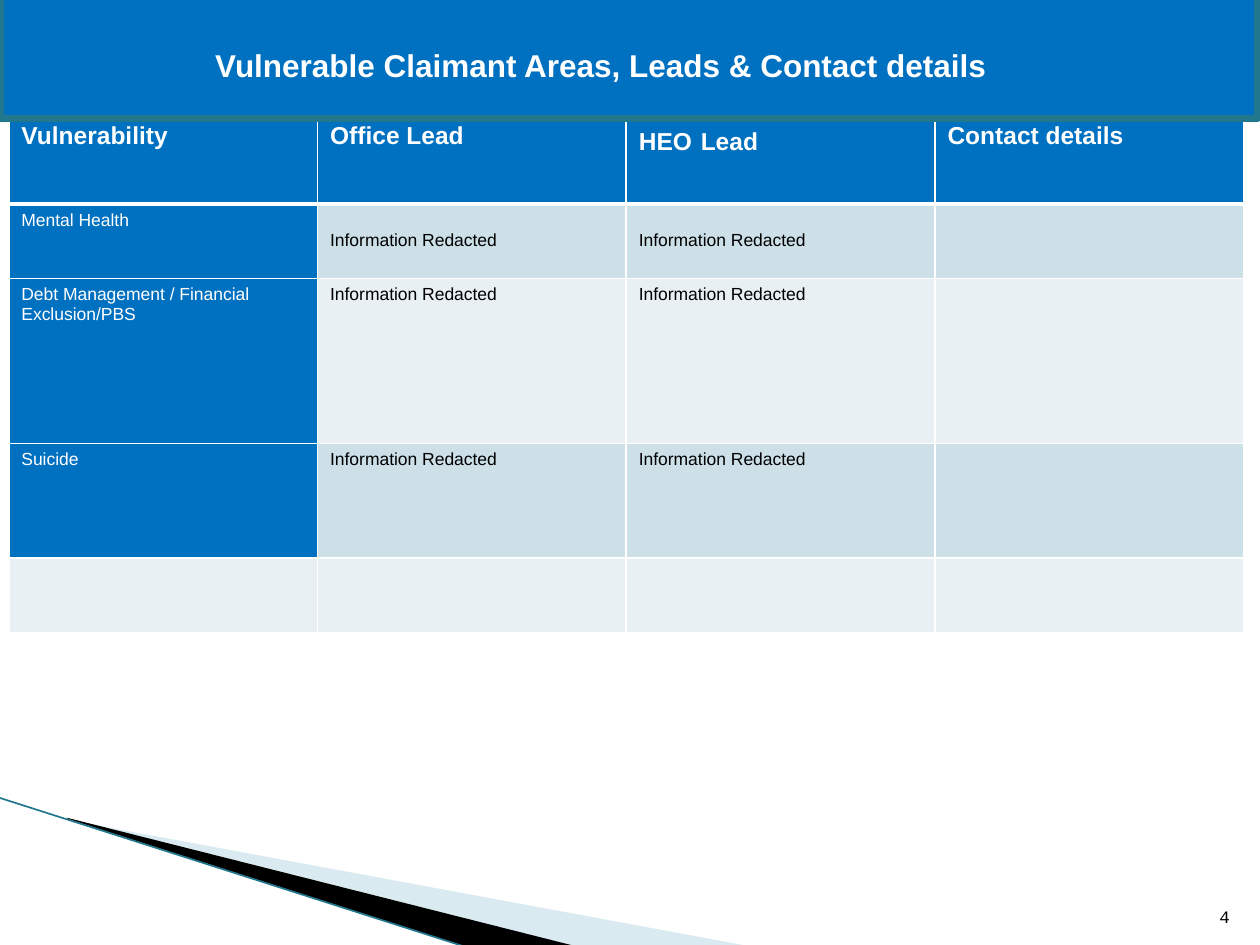
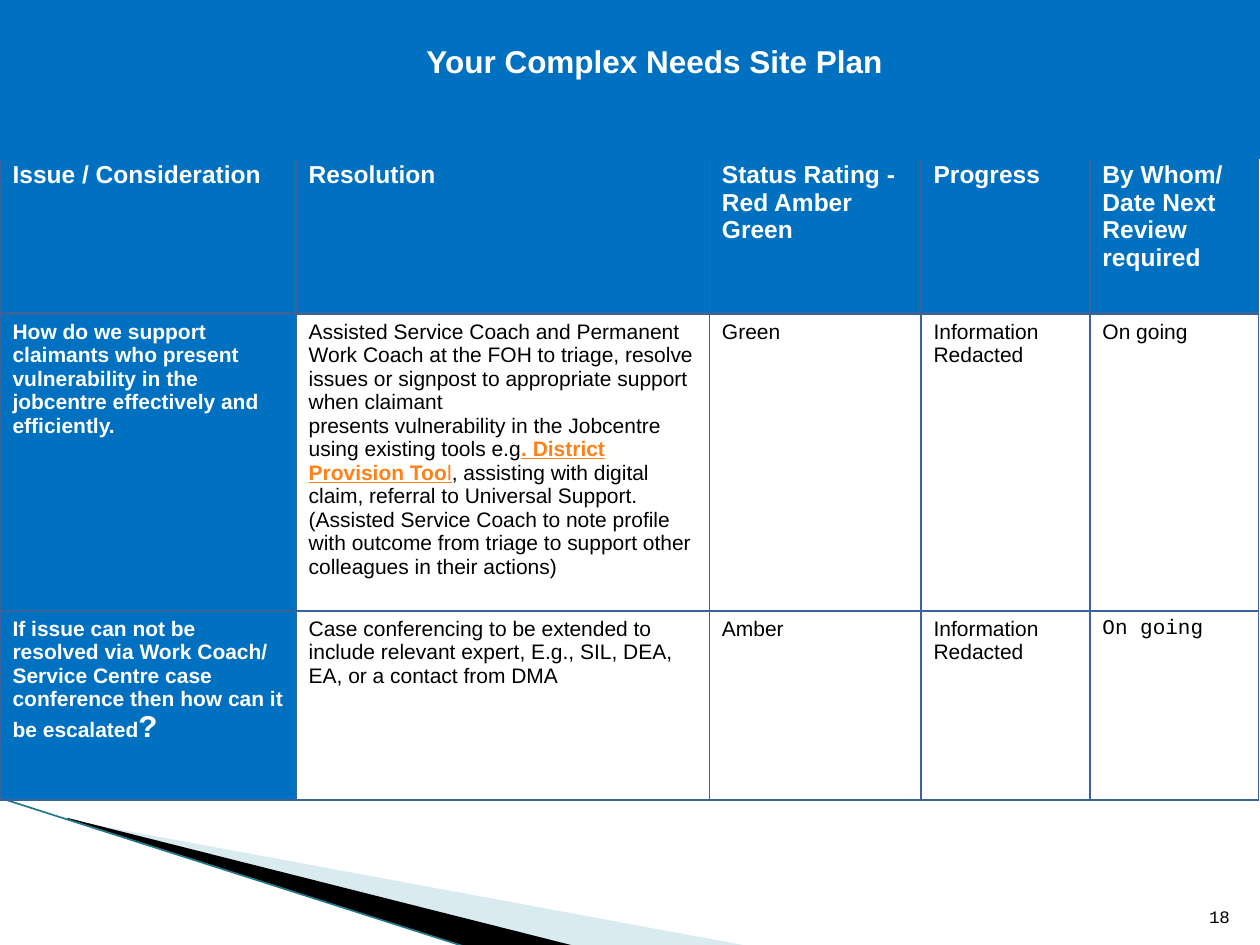
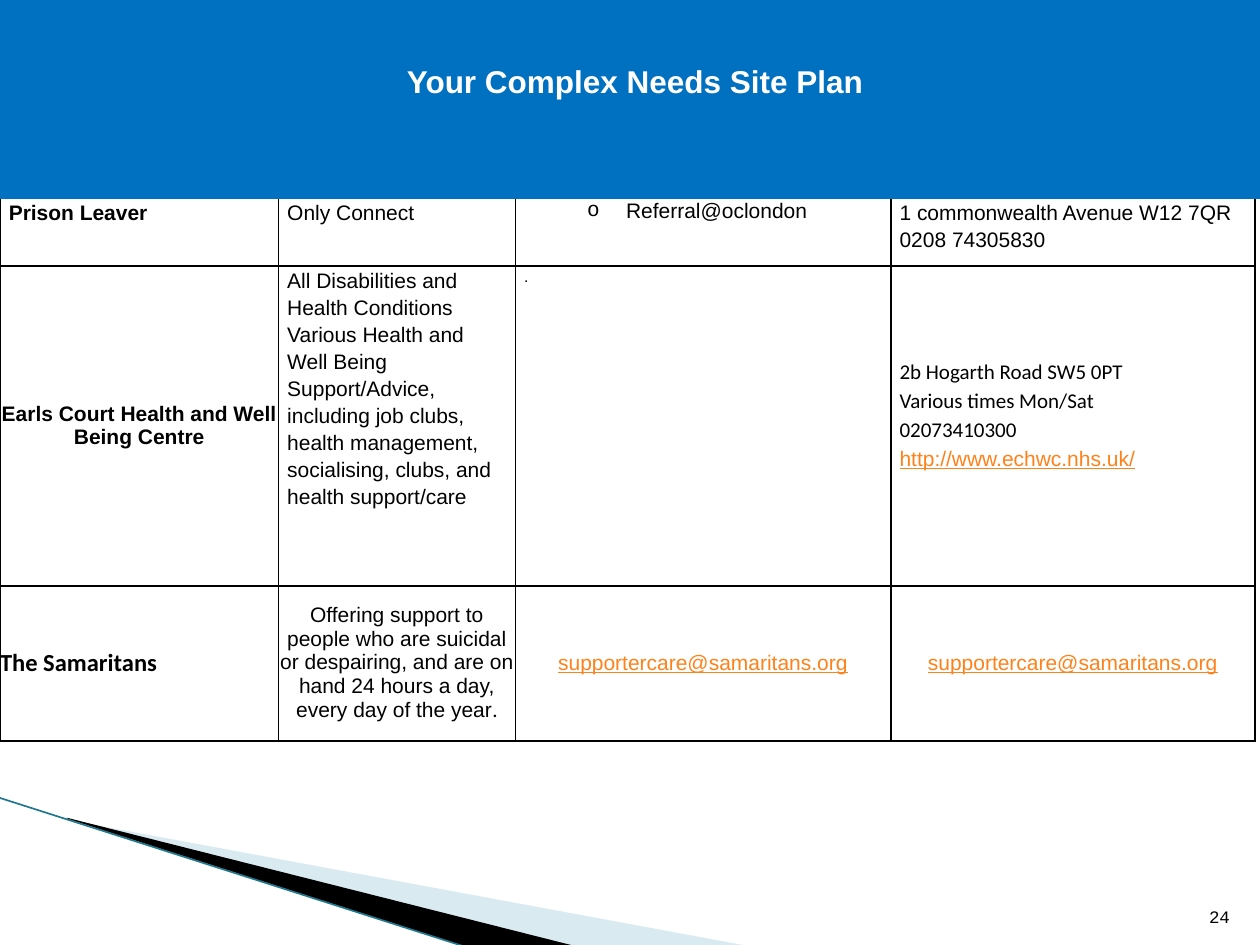
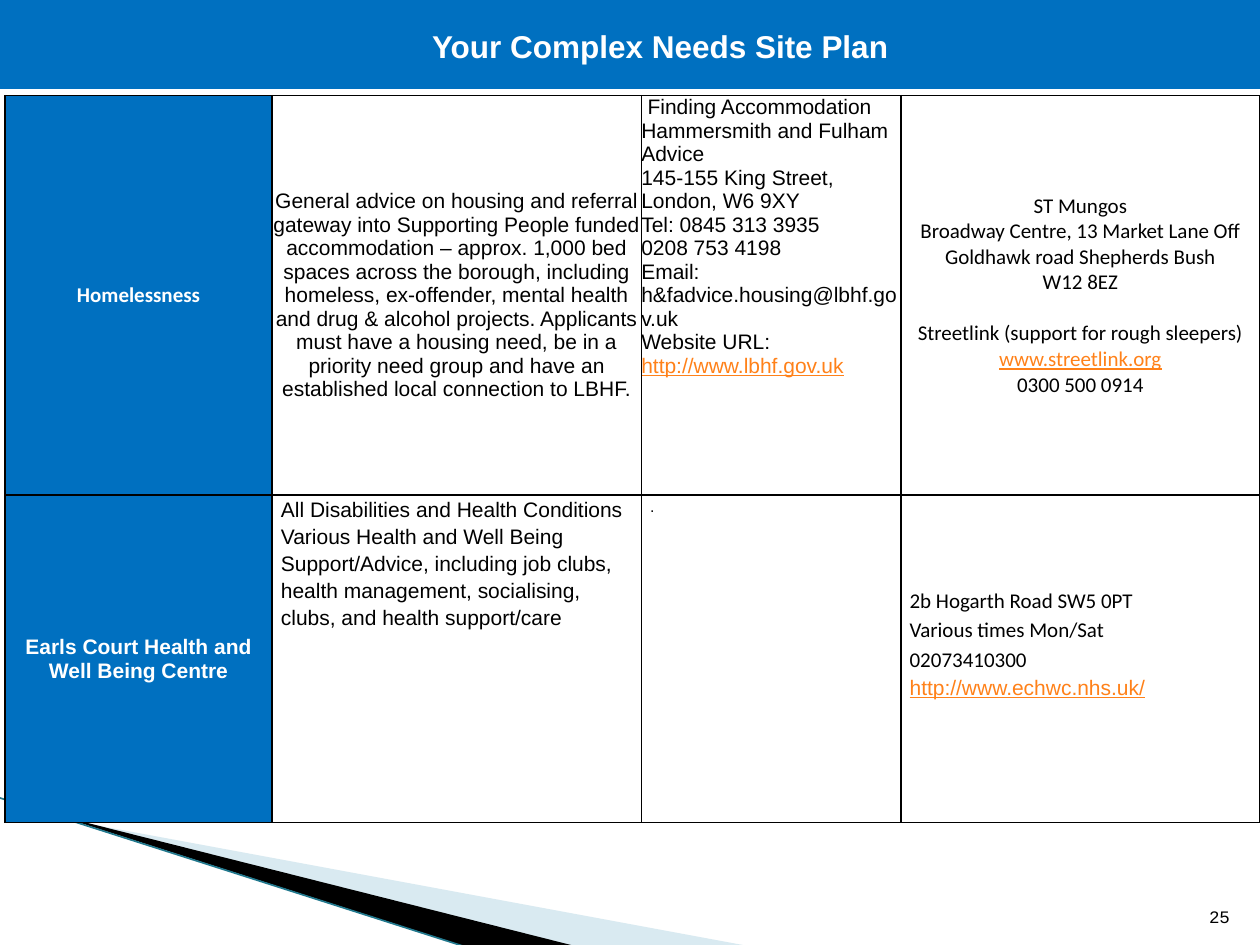
from lxml import etree
from pptx import Presentation
from pptx import util as u
from pptx.dml.color import RGBColor
from pptx.enum import shapes, text
from pptx.oxml import ns

COLORS = {
    "blue": "0070C0", "teal": "21788D", "white": "FFFFFF", "black": "000000",
    "orange": "FF8119", "pale": "A0CBDC", "band_dark": "CDE0E8",
    "band_light": "E8F0F4", "grid": "39639D",
}
LINK = dict(color="orange", underline=True)
ALIGN = {"l": text.PP_ALIGN.LEFT, "c": text.PP_ALIGN.CENTER, "r": text.PP_ALIGN.RIGHT}
ANCHOR = {"t": text.MSO_ANCHOR.TOP, "m": text.MSO_ANCHOR.MIDDLE, "b": text.MSO_ANCHOR.BOTTOM}
DEFAULT_INSETS = (0.1, 0.05, 0.1, 0.05)
NO_INSETS = (0, 0, 0, 0)
SIDE_INSETS = (0.07, 0, 0.07, 0)
LOWERED_INSETS = (0.07, 0.71, 0.07, 0)


def rgb(name):
    return RGBColor.from_string(COLORS[name])


def sub(parent, tag, **attributes):
    return etree.SubElement(parent, ns.qn(tag), {k: str(v) for k, v in attributes.items()})


# ---- Text ----
def para(*runs, **options):
    """A paragraph; each run is a string or a (string, format) pair."""
    return runs, options


def write(frame, paragraphs, **base):
    """Fill a text frame; paragraph and run formats override the base format."""
    frame.word_wrap = True
    for index, item in enumerate(paragraphs):
        runs, options = ((item,), {}) if isinstance(item, str) else item
        style = {**base, **options}
        paragraph = frame.paragraphs[0] if index == 0 else frame.add_paragraph()
        properties = paragraph._p.get_or_add_pPr()
        if "indent" in style:
            left, first = style["indent"]
            properties.set("marL", str(u.Inches(left)))
            properties.set("indent", str(u.Inches(first)))
        if "bullet" in style:
            sub(properties, "a:buFont", typeface="Courier New")
            sub(properties, "a:buChar", char=style["bullet"])
        paragraph.alignment = ALIGN[style.get("align", "l")]
        if "spacing" in style:
            paragraph.line_spacing = style["spacing"]
        if "before" in style:
            paragraph.space_before = u.Pt(style["before"])
        for entry in runs:
            words, override = (entry, {}) if isinstance(entry, str) else entry
            look = {**style, **override}
            run = paragraph.add_run()
            run.text = words
            font = run.font
            font.name = look.get("font", "Arial")
            font.size = u.Pt(look.get("size", 12))
            font.bold = look.get("bold", False)
            font.underline = look.get("underline", False)
            font.color.rgb = rgb(look.get("color", "black"))


def add_text(slide, box, words, anchor="t", **style):
    frame = slide.shapes.add_textbox(*map(u.Inches, box)).text_frame
    frame.vertical_anchor = ANCHOR[anchor]
    write(frame, [words], **style)


# ---- Shapes ----
def add_box(slide, box, line="blue", title=None):
    shape = slide.shapes.add_shape(shapes.MSO_SHAPE.RECTANGLE, *map(u.Inches, box))
    shape.shadow.inherit = False
    shape.fill.solid()
    shape.fill.fore_color.rgb = rgb("blue")
    shape.line.color.rgb = rgb(line)
    shape.line.width = u.Pt(4.33)
    if title:
        shape.text_frame.vertical_anchor = ANCHOR["m"]
        write(shape.text_frame, [title], size=18, bold=True, color="white", align="c")


def add_wedge(slide, points, color, opacity=None):
    """Draw a closed outline; points are in hundredths of an inch."""
    builder = slide.shapes.build_freeform(*points[0], scale=u.Inches(0.01))
    builder.add_line_segments(points[1:], close=True)
    shape = builder.convert_to_shape()
    shape.shadow.inherit = False
    shape.fill.solid()
    shape.fill.fore_color.rgb = rgb(color)
    shape.line.fill.background()
    if opacity:
        color_element = shape.fill._xPr.find(".//" + ns.qn("a:srgbClr"))
        sub(color_element, "a:alpha", val=opacity * 1000)


def add_corner(slide):
    """The wedges and edge line at the lower left of every slide."""
    add_wedge(slide, [(55, 651), (595, 751), (456, 751), (55, 650)], "pale", opacity=40)
    add_wedge(slide, [(53, 649), (457, 751), (372, 752), (54, 650)], "black")
    ends = map(u.Inches, (-0.01, 6.33, 3.71, 7.52))
    edge = slide.shapes.add_connector(shapes.MSO_CONNECTOR.STRAIGHT, *ends)
    edge.line.color.rgb = rgb("teal")
    edge.line.width = u.Pt(0.95)
    sub(edge._element.spPr, "a:effectLst")


# ---- Tables ----
def cell(*paragraphs, fill=None, anchor="t", insets=DEFAULT_INSETS, **style):
    return dict(paragraphs=paragraphs, fill=fill, anchor=anchor, insets=insets, style=style)


def header(*paragraphs):
    return cell(*paragraphs, fill="blue", size=14, bold=True, color="white")


def centered(*paragraphs, **style):
    return cell(*paragraphs, **{**dict(anchor="m", insets=NO_INSETS, align="c"), **style})


def spaced(*paragraphs, insets=SIDE_INSETS, **style):
    return cell(*paragraphs, **{**dict(insets=insets, spacing=1.15), **style})


def set_border(properties, side, color, width):
    line = sub(properties, "a:ln" + side, w=u.Pt(width))
    sub(sub(line, "a:solidFill"), "a:srgbClr", val=COLORS[color])


def add_table(slide, left, top, widths, heights, rows, border, header_rule=1):
    size = (sum(widths), sum(heights))
    frame = slide.shapes.add_table(len(rows), len(widths), *map(u.Inches, (left, top, *size)))
    table = frame.table
    table.first_row = table.horz_banding = False
    for column, width in zip(table.columns, widths):
        column.width = u.Inches(width)
    for row, height in zip(table.rows, heights):
        row.height = u.Inches(height)
    for row_index, row in enumerate(rows):
        rules = dict(L=1, R=1, T=header_rule if row_index == 1 else 1,
                     B=header_rule if row_index == 0 else 1)
        for column_index, content in enumerate(row):
            target = table.cell(row_index, column_index)
            properties = target._tc.get_or_add_tcPr()
            for side, width in rules.items():
                set_border(properties, side, border, width)
            if content["fill"]:
                target.fill.solid()
                target.fill.fore_color.rgb = rgb(content["fill"])
            else:
                target.fill.background()
            (target.margin_left, target.margin_top,
             target.margin_right, target.margin_bottom) = map(u.Inches, content["insets"])
            target.vertical_anchor = ANCHOR[content["anchor"]]
            write(target.text_frame, content["paragraphs"], **content["style"])


# ---- Slides ----
def start_slide(presentation):
    slide = presentation.slides.add_slide(presentation.slide_layouts[6])
    add_corner(slide)
    return slide


def finish_slide(slide, number, band, title_box=None, line="blue"):
    """Page number, title band and, for a site plan, its title."""
    add_text(slide, (9.46, 7.01, 0.4, 0.4), number, anchor="b",
             size=10, font="Courier New", align="r")
    add_box(slide, band, line)
    if title_box:
        add_box(slide, title_box, title="Your Complex Needs Site Plan")


def health_centre_details():
    """The three cells that describe the health centre."""
    return [
        spaced("All Disabilities and Health Conditions",
               "Various Health and Well Being Support/Advice, including job clubs, "
               "health management, socialising, clubs, and health support/care"),
        spaced(".", size=9),
        spaced("2b Hogarth Road SW5 0PT", "Various times Mon/Sat", "02073410300",
               para("http://www.echwc.nhs.uk/", font="Arial", **LINK),
               insets=LOWERED_INSETS, font="Calibri"),
    ]


def build_contacts(presentation):
    slide = start_slide(presentation)
    rows = [[header("Vulnerability"), header("Office Lead"),
             header(para("HEO", (" ", dict(size=18)), "Lead")), header("Contact details")]]
    areas = ["Mental Health", "Debt Management / Financial Exclusion/PBS", "Suicide", None]
    for index, area in enumerate(areas):
        band = ("band_dark", "band_light")[index % 2]
        if area is None:
            rows.append([cell(fill=band)] * 4)
            continue
        insets = (0.1, 0.21, 0.1, 0.05) if index == 0 else DEFAULT_INSETS
        lead = cell("Information Redacted", fill=band, insets=insets, size=10)
        rows.append([cell(area, fill="blue", size=10, color="white"),
                     lead, lead, cell(fill=band)])
    add_table(slide, 0.07, 0.92, [2.45] * 4, [0.7, 0.59, 1.31, 0.91, 0.59], rows,
              border="white", header_rule=3)
    finish_slide(slide, "4", (0, -0.05, 9.98, 0.99), line="teal")
    add_text(slide, (1.61, 0.32, 8.19, 0.4),
             "Vulnerable Claimant Areas, Leads & Contact details",
             size=18, bold=True, color="white")


def build_issues(presentation):
    slide = start_slide(presentation)
    issue = dict(fill="blue", bold=True, color="white")
    titles = ["Issue / Consideration", "Resolution", "Status Rating - Red Amber Green",
              "Progress", "By Whom/ Date Next Review required"]
    rows = [
        [header(title) for title in titles],
        [cell("How do we support claimants who present vulnerability in the jobcentre "
              "effectively and efficiently.", **issue),
         cell("Assisted Service Coach and Permanent Work Coach at the FOH to triage, resolve "
              "issues or signpost to appropriate support when claimant",
              para("presents vulnerability in the Jobcentre using existing tools e.g",
                   (". District Provision Too", dict(bold=True, **LINK)), ("l", LINK),
                   ", assisting with digital claim, referral to Universal Support. "
                   "(Assisted Service Coach to note profile with outcome from triage to "
                   "support other colleagues in their actions)")),
         cell("Green"), cell("Information Redacted"), cell("On going")],
        [cell(para("If issue can not be resolved via Work Coach/ Service Centre case "
                   "conference then how can it be escalated",
                   ("?", dict(size=18, font="Courier New"))), **issue),
         cell("Case conferencing to be extended to include relevant expert, E.g., SIL, DEA, "
              "EA, or a contact from DMA"),
         cell("Amber"), cell("Information Redacted"), cell("On going", font="Courier New")],
    ]
    add_table(slide, 0, 1.23, [2.35, 3.28, 1.68, 1.34, 1.34], [1.26, 2.36, 1.5], rows,
              border="grid", header_rule=2)
    finish_slide(slide, "18", (0, 0, 10, 1.23), (2.32, 0.21, 5.75, 0.55))


def build_support(presentation):
    slide = start_slide(presentation)
    mail = centered("supportercare@samaritans.org", **LINK)
    rows = [
        [spaced("Prison Leaver", bold=True), spaced("Only Connect"),
         spaced("Referral@oclondon", bullet="o", indent=(0.81, -0.31), spacing=u.Pt(14.4)),
         spaced("1 commonwealth Avenue W12 7QR 0208 74305830")],
        [centered("Earls Court Health and Well Being Centre", bold=True),
         *health_centre_details()],
        [centered("The Samaritans", align="l", size=14, font="Calibri", bold=True),
         centered(para("Offering support to people who are suicidal or despairing, and are on "
                       "hand 24 hours a day, every day of the year",
                       (".", dict(font="Calibri")))),
         mail, mail],
    ]
    add_table(slide, 0, 1.57, [2.21, 1.88, 2.98, 2.89], [0.54, 2.54, 1.23], rows,
              border="black")
    finish_slide(slide, "24", (0, 0, 10, 1.55), (2.4, 0.29, 5.28, 0.71))


def build_housing(presentation):
    slide = start_slide(presentation)
    topic = dict(fill="blue", bold=True, color="white")
    rows = [
        [centered("Homelessness", font="Calibri", **topic),
         centered("General advice on housing and referral gateway into Supporting People "
                  "funded accommodation – approx. 1,000 bed spaces across the borough, "
                  "including homeless, ex-offender, mental health and drug & alcohol projects. "
                  "Applicants must have a housing need, be in a priority need group and have "
                  "an established local connection to LBHF."),
         cell(para("Finding Accommodation", indent=(0, 0.05)),
              "Hammersmith and Fulham Advice", "145-155 King Street, London, W6 9XY",
              "Tel: 0845 313 3935", "0208 753 4198", "Email: h&fadvice.housing@lbhf.gov.uk",
              para("Website URL: ", ("http://www.lbhf.gov.uk", LINK)), insets=NO_INSETS),
         centered("ST Mungos",
                  "Broadway Centre, 13 Market Lane Off Goldhawk road Shepherds Bush", "W12 8EZ",
                  para("Streetlink (support for rough sleepers)", before=14.6),
                  para("www.streetlink.org", **LINK), "0300 500 0914", font="Calibri")],
        [centered("Earls Court Health and Well Being Centre", **topic),
         *health_centre_details()],
    ]
    add_table(slide, 0.04, 0.76, [2.12, 2.93, 2.06, 2.85], [3.17, 2.6], rows, border="black")
    finish_slide(slide, "25", (0, 0, 10, 0.68), (2.72, 0.13, 5.04, 0.47))


def main():
    presentation = Presentation()
    presentation.slide_width, presentation.slide_height = u.Inches(10), u.Inches(7.5)
    for build in (build_contacts, build_issues, build_support, build_housing):
        build(presentation)
    presentation.save("out.pptx")


if __name__ == "__main__":
    main()
